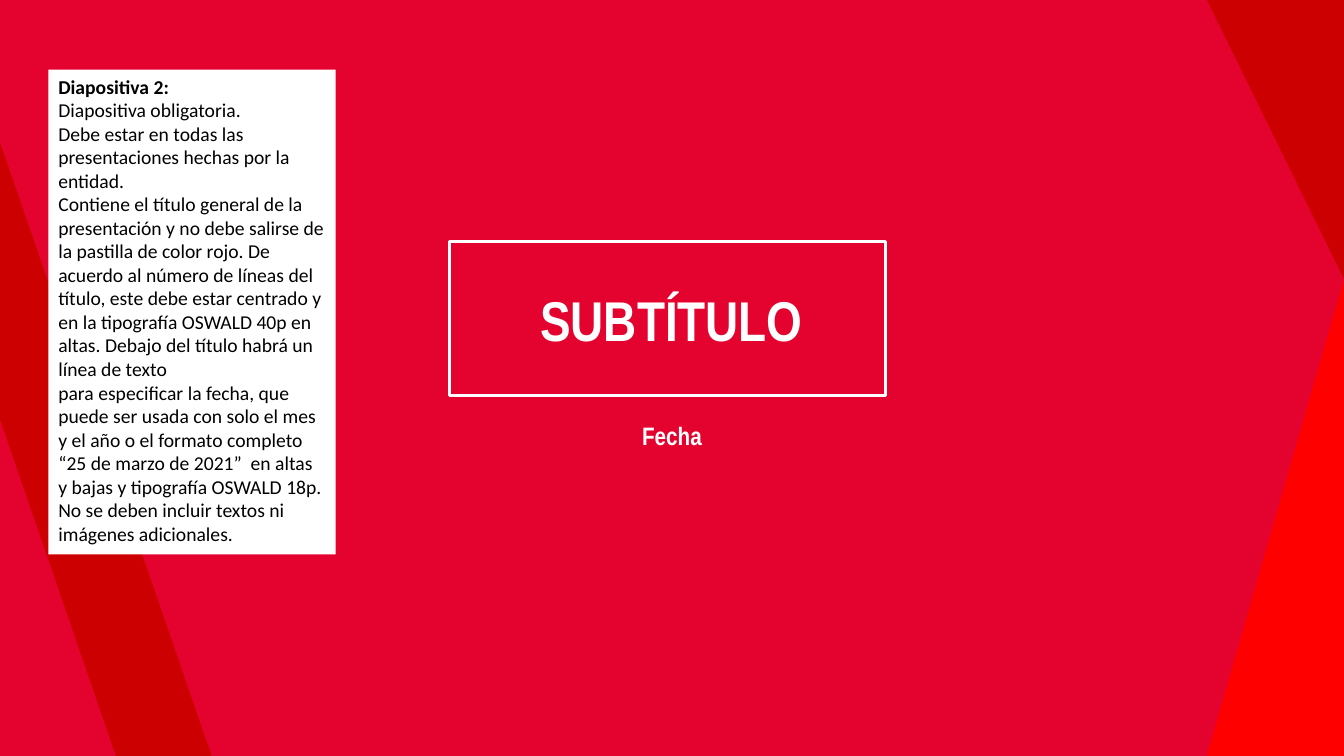
from pptx import Presentation
from pptx.dml.color import RGBColor
from pptx.enum.shapes import MSO_SHAPE
from pptx.enum.text import MSO_ANCHOR, MSO_AUTO_SIZE, PP_ALIGN
from pptx.util import Inches, Pt

RECTANGLE = MSO_SHAPE.RECTANGLE
TRIANGLE = MSO_SHAPE.RIGHT_TRIANGLE
MIDDLE, TOP = MSO_ANCHOR.MIDDLE, MSO_ANCHOR.TOP
CENTER, LEFT = PP_ALIGN.CENTER, PP_ALIGN.LEFT
NO_FIT = MSO_AUTO_SIZE.NONE

THEME = {
    "crimson": RGBColor(0xE4, 0x03, 0x2E),
    "bright": RGBColor(0xFF, 0x00, 0x00),
    "dark": RGBColor(0xCC, 0x00, 0x00),
    "white": RGBColor(0xFF, 0xFF, 0xFF),
    "black": RGBColor(0x00, 0x00, 0x00),
    "heading_font": "Arial Narrow",
    "note_font": "Calibri",
    "title_size": Pt(40),
    "date_size": Pt(18),
    "note_size": Pt(14),
    "frame_width": Pt(2.25),
}

GUIDELINES = [
    "Diapositiva 2:",
    "Diapositiva obligatoria.",
    "Debe estar en todas las presentaciones hechas por la entidad.",
    "Contiene el título general de la presentación y no debe salirse de la pastilla "
    "de color rojo. De acuerdo al número de líneas del título, este debe estar "
    "centrado y en la tipografía OSWALD 40p en altas. Debajo del título habrá un "
    "línea de texto",
    "para especificar la fecha, que puede ser usada con solo el mes y el año o el "
    "formato completo “25 de marzo de 2021”  en altas y bajas y tipografía OSWALD 18p.",
    "No se deben incluir textos ni imágenes adicionales.",
]


def add_panel(kind, left, top, width, height, color=None):
    panel = slide.shapes.add_shape(
        kind, Inches(left), Inches(top), Inches(width), Inches(height))
    panel.shadow.inherit = False
    panel.line.fill.background()
    if color is None:
        panel.fill.background()
    else:
        panel.fill.solid()
        panel.fill.fore_color.rgb = color
    return panel


def write_line(paragraph, text, color, **font_values):
    paragraph.text = text
    paragraph.space_before = Pt(0)
    for name, value in font_values.items():
        setattr(paragraph.font, name, value)
    paragraph.font.color.rgb = color


deck = Presentation()
deck.slide_width = Inches(13.33)
deck.slide_height = Inches(7.5)
slide = deck.slides.add_slide(deck.slide_layouts[0])

add_panel(RECTANGLE, 0, 0, 13.33, 7.5, THEME["crimson"])
lower_corner = add_panel(TRIANGLE, 11.97, 2.77, 1.36, 4.73, THEME["bright"])
lower_corner._element.spPr.xfrm.set("flipH", "1")
upper_corner = add_panel(TRIANGLE, 11.97, 0, 1.36, 2.77, THEME["dark"])
upper_corner.rotation = 180

outline = slide.shapes.build_freeform(Inches(2.1), Inches(7.5), scale=1.0)
outline.add_line_segments(
    [(Inches(x), Inches(y)) for x, y in [(0, 1.41), (0, 4.16), (1.15, 7.5)]])
stripe = outline.convert_to_shape()
stripe.shadow.inherit = False
stripe.fill.solid()
stripe.fill.fore_color.rgb = THEME["dark"]
stripe.line.fill.background()

title = slide.shapes.title
date = slide.placeholders[1]
headings = [
    (title, "SUBTÍTULO", (1.85, 2.19, 9.62, 2.61), THEME["title_size"], MIDDLE, 0.9),
    (date, "Fecha", (3.7, 4.12, 5.93, 0.9), THEME["date_size"], TOP, 1.0),
]
for heading, text, place, size, anchor, spacing in headings:
    slide.shapes._spTree.append(heading._element)
    for side, value in zip(("left", "top", "width", "height"), place):
        setattr(heading, side, Inches(value))
    frame_format = {"word_wrap": True, "auto_size": NO_FIT, "vertical_anchor": anchor}
    for name, value in frame_format.items():
        setattr(heading.text_frame, name, value)
    line = heading.text_frame.paragraphs[0]
    write_line(line, text, THEME["white"],
               name=THEME["heading_font"], size=size, bold=True)
    line.alignment = CENTER
    line.line_spacing = spacing
title.text_frame.margin_bottom = Inches(0.62)

title_frame = add_panel(RECTANGLE, 4.46, 2.4, 4.32, 1.52)
title_frame.line.color.rgb = THEME["white"]
title_frame.line.width = THEME["frame_width"]

note = add_panel(RECTANGLE, 0.48, 0.69, 2.85, 4.81, THEME["white"])
note.text_frame.word_wrap = True
note.text_frame.vertical_anchor = TOP
for index, text in enumerate(GUIDELINES):
    line = note.text_frame.paragraphs[0] if index == 0 else note.text_frame.add_paragraph()
    write_line(line, text, THEME["black"],
               name=THEME["note_font"], size=THEME["note_size"], bold=index == 0)
    line.alignment = LEFT

deck.save("out.pptx")
